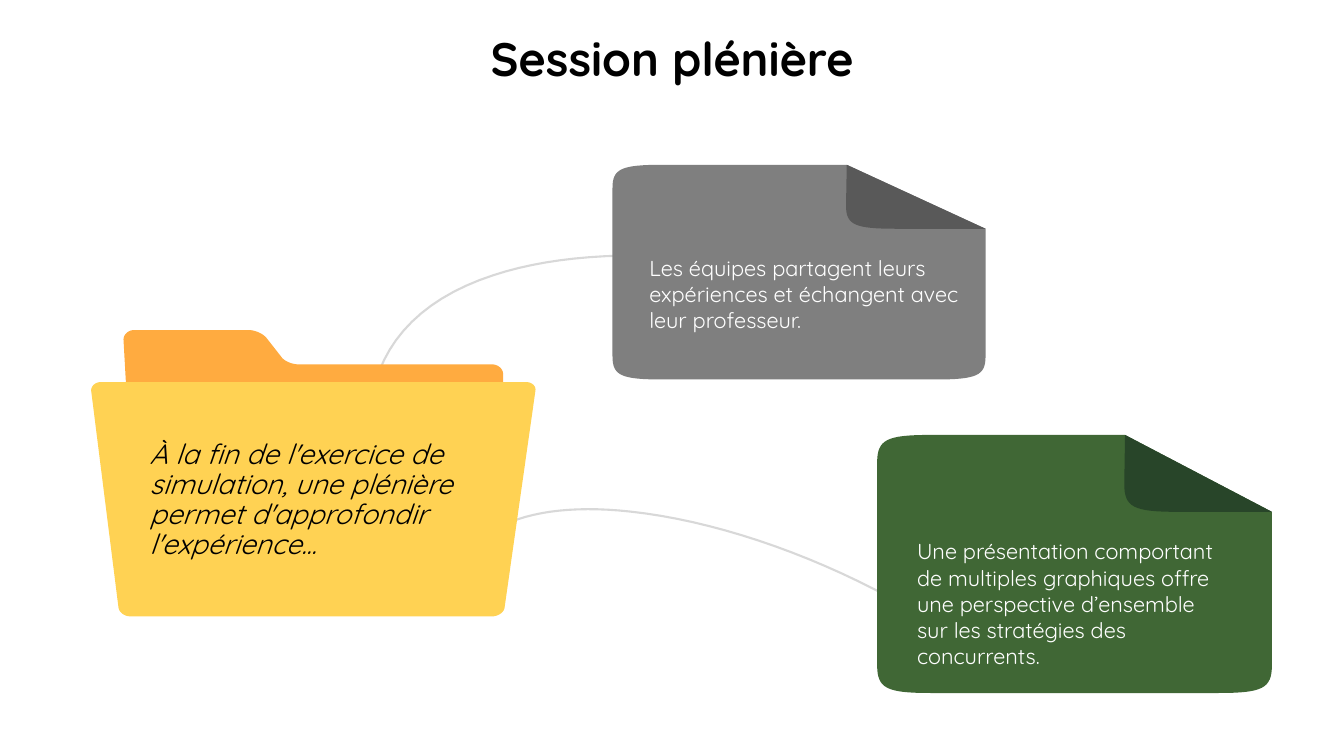
from dataclasses import dataclass

from pptx import Presentation
from pptx.dml.color import RGBColor
from pptx.enum.text import MSO_ANCHOR, MSO_AUTO_SIZE, PP_ALIGN
from pptx.util import Inches, Pt

FONT = "Quicksand"
STEPS = 16      # straight pieces per curve
BULGE = 0.83    # how square the corners of a note are


@dataclass
class Box:
    left: float
    top: float
    width: float
    height: float

    def at(self, x: float, y: float) -> tuple:
        """Point at a share of the width and height."""
        return self.left + x * self.width, self.top + y * self.height


@dataclass
class Note:
    box: Box
    fill: str
    fold: str
    area: Box
    inset: float
    text: str


def color(code: str) -> RGBColor:
    return RGBColor.from_string(code)


def trace(start: tuple, moves: list) -> list:
    """Turn moves (x, y) and curves (x1, y1, x2, y2, x, y) into points."""
    points = [start]
    for move in moves:
        if len(move) == 2:
            points.append(move)
            continue
        ends = [points[-1], move[:2], move[2:4], move[4:]]
        for step in range(1, STEPS + 1):
            t = step / STEPS
            parts = ((1 - t) ** 3, 3 * t * (1 - t) ** 2, 3 * t * t * (1 - t), t ** 3)
            points.append(tuple(sum(k * end[i] for k, end in zip(parts, ends))
                                for i in (0, 1)))
    return points


def draw(slide, start: tuple, moves: list, fill: str = "", line: str = "") -> None:
    points = [(Inches(x), Inches(y)) for x, y in trace(start, moves)]
    path = slide.shapes.build_freeform(*points[0])
    path.add_line_segments(points[1:], close=bool(fill))
    shape = path.convert_to_shape()
    shape.shadow.inherit = False
    if fill:
        shape.fill.solid()
        shape.fill.fore_color.rgb = color(fill)
    else:
        shape.fill.background()
    if line:
        shape.line.color.rgb = color(line)
        shape.line.width = Pt(3)
    else:
        shape.line.fill.background()


def place(shape, box: Box) -> None:
    shape.left, shape.top = Inches(box.left), Inches(box.top)
    shape.width, shape.height = Inches(box.width), Inches(box.height)


def write(shape, text: str, size: float, ink: str, insets: tuple,
          anchor=MSO_ANCHOR.TOP):
    frame = shape.text_frame
    frame.word_wrap = True
    frame.auto_size = MSO_AUTO_SIZE.NONE
    frame.vertical_anchor = anchor
    (frame.margin_left, frame.margin_top,
     frame.margin_right, frame.margin_bottom) = map(Inches, insets)
    frame.text = text
    para = frame.paragraphs[0]
    para.font.name, para.font.size = FONT, Pt(size)
    para.font.color.rgb = color(ink)
    return para


def add_box(slide, box: Box):
    shape = slide.shapes.add_textbox(0, 0, 0, 0)
    place(shape, box)
    return shape


def bend(box: Box, start: tuple, corner: tuple, end: tuple) -> tuple:
    """Curve that rounds a corner; all points are shares of the box."""
    pulls = [tuple(a + BULGE * (c - a) for a, c in zip(side, corner))
             for side in (start, end)]
    return box.at(*pulls[0]) + box.at(*pulls[1]) + box.at(*end)


def add_note(slide, note: Note) -> None:
    box = note.box
    rx, ry = 0.135, 0.108       # corner
    fx, fy = 0.628, 0.298       # fold
    draw(slide, box.at(rx, 0), [
        bend(box, (rx, 0), (0, 0), (0, ry)),
        box.at(0, 1 - ry),
        bend(box, (0, 1 - ry), (0, 1), (rx, 1)),
        box.at(1 - rx, 1),
        bend(box, (1 - rx, 1), (1, 1), (1, 1 - ry)),
        box.at(1, fy),
        box.at(fx, 0),
    ], note.fill)
    left, low = fx - 0.002, fy - ry
    draw(slide, box.at(1, fy), [
        box.at(fx, 0),
        box.at(left, low),
        bend(box, (left, low), (left, fy), (left + rx, fy)),
    ], note.fold)


NOTES = [
    Note(Box(12.15, 3.27, 7.4, 4.26), "7F7F7F", "595959",
         Box(12.38, 5.05, 7.21, 2.19), 0.5,
         "Les équipes partagent leurs expériences et échangent avec "
         "leur professeur."),
    Note(Box(17.4, 8.63, 7.83, 5.12), "406735", "284529",
         Box(18.19, 10.68, 6.41, 2.66), 0,
         "Une présentation comportant de multiples graphiques offre une "
         "perspective d’ensemble sur les stratégies des concurrents."),
]

# Links from the folder to the notes
LINKS = [
    ((7.33, 8.3), [(7.4, 6.94, 8.25, 5.96, 9.79, 5.46),
                   (11.06, 5.04, 12.76, 4.96, 14.79, 5.21)]),
    ((9.77, 10.54), [(10.36, 10.16, 11.32, 10.02, 12.5, 10.15),
                     (14.09, 10.32, 15.97, 10.94, 17.68, 11.87)]),
]

# Folder: back with its tab, then front
BACK = ((9.98, 7.62), [
    (9.98, 7.42), (9.98, 7.32, 9.88, 7.23, 9.76, 7.23),
    (5.92, 7.23), (5.8, 7.23, 5.64, 7.17, 5.58, 7.08),
    (5.29, 6.71), (5.22, 6.62, 5.06, 6.55, 4.94, 6.55),
    (2.66, 6.55), (2.54, 6.55, 2.45, 6.64, 2.45, 6.74),
    (2.5, 7.62)])
FRONT = ((10.01, 12.05), [
    (10, 12.15, 9.88, 12.23, 9.76, 12.23),
    (2.59, 12.23), (2.47, 12.23, 2.36, 12.15, 2.35, 12.05),
    (1.81, 7.76), (1.8, 7.66, 1.89, 7.58, 2.01, 7.58),
    (10.43, 7.58), (10.55, 7.58, 10.64, 7.66, 10.62, 7.76)])


def main() -> None:
    deck = Presentation()
    deck.slide_width, deck.slide_height = Inches(26.66), Inches(15)
    slide = deck.slides.add_slide(deck.slide_layouts[5])

    # Title
    title = slide.shapes.title
    place(title, Box(6.57, 0.53, 13.52, 1.23))
    para = write(title, "Session plénière", 67, "000000", (0.1, 0.05, 0.1, 0.05))
    para.alignment = PP_ALIGN.CENTER
    para.font.bold = True

    # Shapes
    for start, moves in LINKS:
        draw(slide, start, moves, line="D8D8D8")
    draw(slide, *BACK, fill="FFAB40")
    draw(slide, *FRONT, fill="FFD253")
    for note in NOTES:
        add_note(slide, note)

    # Texts
    para = write(add_box(slide, Box(2.77, 8.18, 6.69, 3.5)),
                 "À la fin de l'exercice de simulation, une plénière permet "
                 "d'approfondir l'expérience...",
                 40, "000000", (0.2, 0.1, 0.2, 0.1), MSO_ANCHOR.MIDDLE)
    para.line_spacing = 0.9
    para.font.italic = True
    for note in NOTES:
        write(add_box(slide, note.area), note.text, 31, "FFFFFF",
              (note.inset, 0, 0.27, 0))

    deck.save("out.pptx")


if __name__ == "__main__":
    main()
